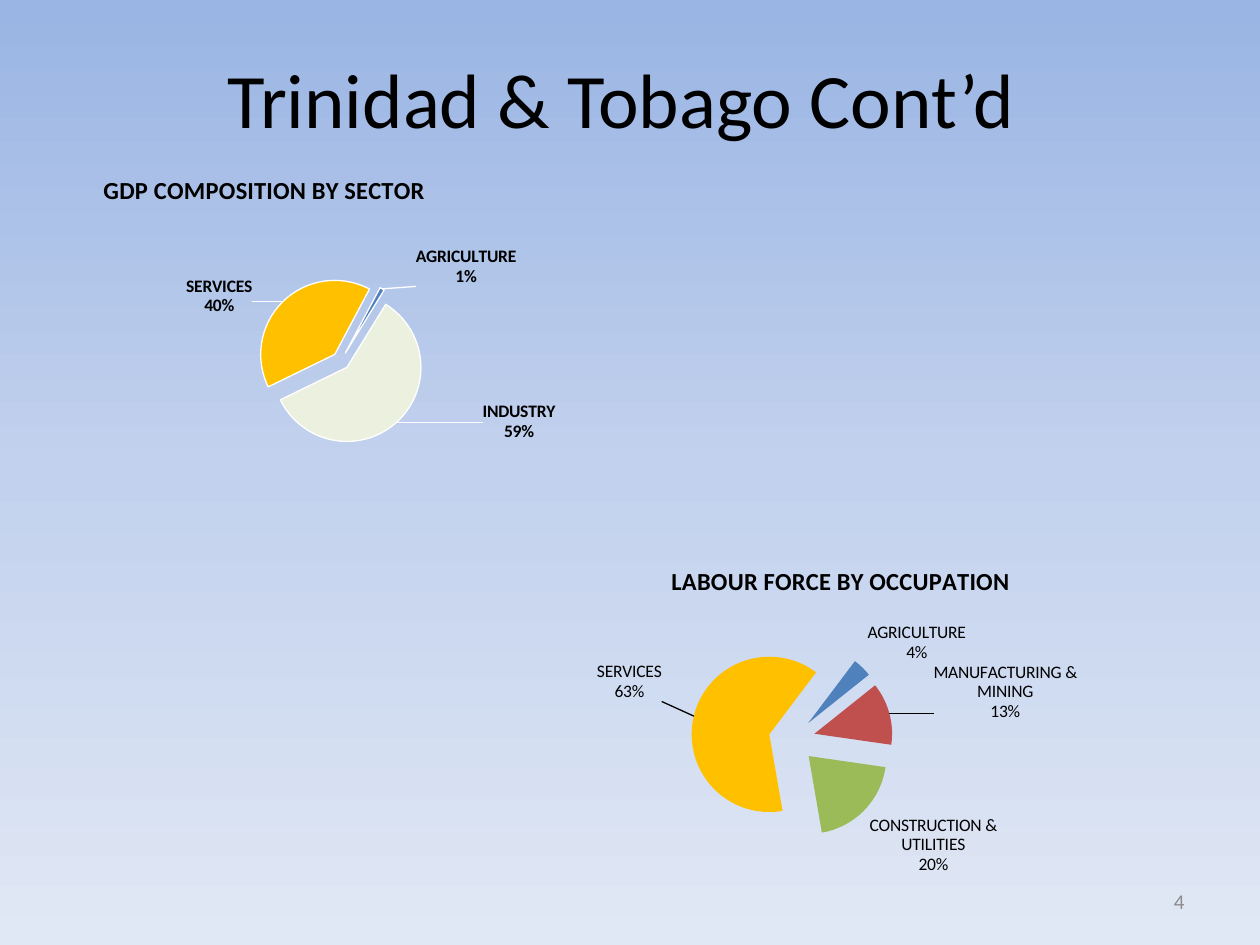
from copy import deepcopy
from dataclasses import dataclass

from lxml import etree
from pptx import Presentation
from pptx.chart.data import CategoryChartData
from pptx.dml.color import RGBColor
from pptx.enum.chart import XL_CHART_TYPE, XL_LABEL_POSITION
from pptx.enum.text import MSO_ANCHOR, PP_ALIGN
from pptx.oxml.ns import qn
from pptx.util import Emu, Pt

PIE = XL_CHART_TYPE.PIE
OUTSIDE = XL_LABEL_POSITION.OUTSIDE_END
MIDDLE = MSO_ANCHOR.MIDDLE
CENTER, RIGHT = PP_ALIGN.CENTER, PP_ALIGN.RIGHT
PX_PER_INCH = 126


@dataclass(frozen=True)
class Theme:
    font: str = "Calibri"
    text: str = "000000"
    muted: str = "8C8C8C"
    white: str = "FFFFFF"
    blue: str = "4F81BD"
    red: str = "C0504D"
    green: str = "9BBB59"
    pale: str = "EBF1DE"
    gold: str = "FFC000"
    background: tuple = ((0, "9AB5E4"), (0.5, "C2D1ED"), (1, "E1E8F5"))
    title_size: int = 44
    chart_title_size: int = 14
    number_size: int = 12
    label_size: int = 10


def px(n):
    return Emu(round(n * 914400 / PX_PER_INCH))


def element(tag, val=None):
    el = etree.Element(qn(tag))
    if val is not None:
        el.set("val", str(val))
    return el


def set_layout(parent, index, size, at, inner=False):
    for old in parent.findall(qn("c:layout")):
        parent.remove(old)
    layout = element("c:layout")
    manual = etree.SubElement(layout, qn("c:manualLayout"))
    if inner:
        manual.append(element("c:layoutTarget", "inner"))
    if len(at) == 4 or inner is None:
        manual.append(element("c:xMode", "edge"))
        manual.append(element("c:yMode", "edge"))
    for name, value, whole in zip("xywh", at, size * 2):
        manual.append(element(f"c:{name}", round(value / whole, 4)))
    parent.insert(index, layout)


def show_category_percent(labels):
    flags = {"c:showVal": 0, "c:showCatName": 1, "c:showPercent": 1}
    for tag, val in flags.items():
        labels.find(qn(tag)).set("val", str(val))
    separator = element("c:separator")
    separator.text = "\n"
    labels.find(qn("c:showBubbleSize")).addnext(separator)


class SlideBuilder:
    def __init__(self, slide, theme):
        self.slide, self.theme = slide, theme

    def font(self, font, size, color=None, bold=False):
        font.name, font.size, font.bold = self.theme.font, Pt(size), bold
        font.color.rgb = RGBColor.from_string(color or self.theme.text)

    def background(self):
        fill = self.slide.background.fill
        fill.gradient()
        fill.gradient_angle = 270
        first, last = fill.gradient_stops
        stops = self.slide.background._cSld.find(".//" + qn("a:gsLst"))
        stops.insert(1, deepcopy(stops[0]))
        for stop, (position, color) in zip(fill.gradient_stops, self.theme.background):
            stop.position = position
            stop.color.rgb = RGBColor.from_string(color)

    def text(self, at, text, size, align, color=None):
        tf = self.slide.shapes.add_textbox(*map(px, at)).text_frame
        tf.word_wrap, tf.vertical_anchor = True, MIDDLE
        tf.text = text
        p = tf.paragraphs[0]
        p.alignment = align
        self.font(p.runs[0].font, size, color)

    def pie(self, at, title, title_at, plot_at, start, slices, leader,
            outline=None, explode=None, bold=False):
        theme, size = self.theme, at[2:]
        data = CategoryChartData()
        data.categories = [s["name"] for s in slices]
        data.add_series("Series 1", [s["value"] for s in slices])
        chart = self.slide.shapes.add_chart(PIE, *map(px, at), data).chart
        chart.has_legend = False
        self.font(chart.font, theme.label_size)
        tf = chart.chart_title.text_frame
        tf.text = title
        self.font(tf.paragraphs[0].runs[0].font, theme.chart_title_size, bold=True)
        set_layout(chart.chart_title._element, 1, size, title_at, inner=None)
        plot = chart.plots[0]
        plot.vary_by_categories = True
        set_layout(plot._element.getparent(), 0, size, plot_at, inner=True)
        plot._element.append(element("c:firstSliceAng", start))
        series = plot.series[0]
        if explode:
            series._element.find(qn("c:tx")).addnext(element("c:explosion", explode))
        self.series_labels(series, leader, bold)
        for i, item in enumerate(slices):
            self.slice(series.points[i], item, size, outline, bold)

    def series_labels(self, series, leader, bold):
        labels = series.data_labels
        labels.position = OUTSIDE
        self.font(labels.font, self.theme.label_size, bold=bold)
        show_category_percent(labels._element)
        lines = element("c:leaderLines")
        sp = etree.SubElement(lines, qn("c:spPr"))
        ln = etree.SubElement(sp, qn("a:ln"), w=str(Pt(0.75)))
        fill = etree.SubElement(ln, qn("a:solidFill"))
        etree.SubElement(fill, qn("a:srgbClr"), val=leader)
        labels._element.find(qn("c:showLeaderLines")).addnext(lines)

    def slice(self, point, item, size, outline, bold):
        fill, line = point.format.fill, point.format.line
        fill.solid()
        fill.fore_color.rgb = RGBColor.from_string(item["color"])
        if outline:
            line.color.rgb = RGBColor.from_string(outline)
            line.width = Pt(0.75)
        else:
            line.fill.background()
        if "explode" in item:
            dpt = point.format._element.getparent() if hasattr(point.format, "_element") \
                else point._ser.get_or_add_dPt_for_point(point._idx)
            dpt.find(qn("c:idx")).addnext(element("c:explosion", item["explode"]))
        if "shift" not in item:
            return
        label = point.data_label
        label.position = OUTSIDE
        if "label" in item:
            tf = label.text_frame
            tf.text = item["label"]
            for p in tf.paragraphs:
                self.font(p.runs[0].font, self.theme.label_size, bold=bold)
        else:
            self.font(label.font, self.theme.label_size, bold=bold)
        dlbl = label._get_or_add_dLbl()
        show_category_percent(dlbl)
        if any(item["shift"]):
            set_layout(dlbl, 1, size, item["shift"])


def main():
    theme = Theme()
    prs = Presentation()
    prs.slide_width, prs.slide_height = px(1260), px(945)
    s = SlideBuilder(prs.slides.add_slide(prs.slide_layouts[6]), theme)
    s.background()
    s.text((63, 38, 1134, 120), "Trinidad & Tobago Cont’d ", theme.title_size, CENTER)
    s.text((903, 876, 294, 50), "4", theme.number_size, RIGHT, theme.muted)
    s.pie(
        (21, 158, 651, 336), "GDP COMPOSITION BY SECTOR", (78, 10),
        (237, 120, 166, 166), 28,
        [
            dict(name="AGRICULTURE", value=1, color=theme.blue, explode=12, shift=(30, 4)),
            dict(name="INDUSTRY", value=59, color=theme.pale, explode=12, shift=(81, -26)),
            dict(name="SERVICES", value=40, color=theme.gold, explode=12, shift=(-26, 20)),
        ],
        theme.white, outline=theme.white, bold=True,
    )
    s.pie(
        (441, 536, 791, 367), "LABOUR FORCE BY OCCUPATION", (226, 24),
        (250, 103, 202, 202), 37,
        [
            dict(name="AGRICULTURE", value=4, color=theme.blue),
            dict(name="MANUFACTURING & MINING", value=13, color=theme.red,
                 label="MANUFACTURING & MINING\n13%", shift=(37, 10)),
            dict(name="CONSTRUCTION & UTILITIES", value=20, color=theme.green,
                 label="CONSTRUCTION & UTILITIES\n20%", shift=(0, 0)),
            dict(name="SERVICES", value=63, color=theme.gold, explode=8, shift=(-25, -13)),
        ],
        theme.text, explode=30,
    )
    prs.save("out.pptx")


if __name__ == "__main__":
    main()
